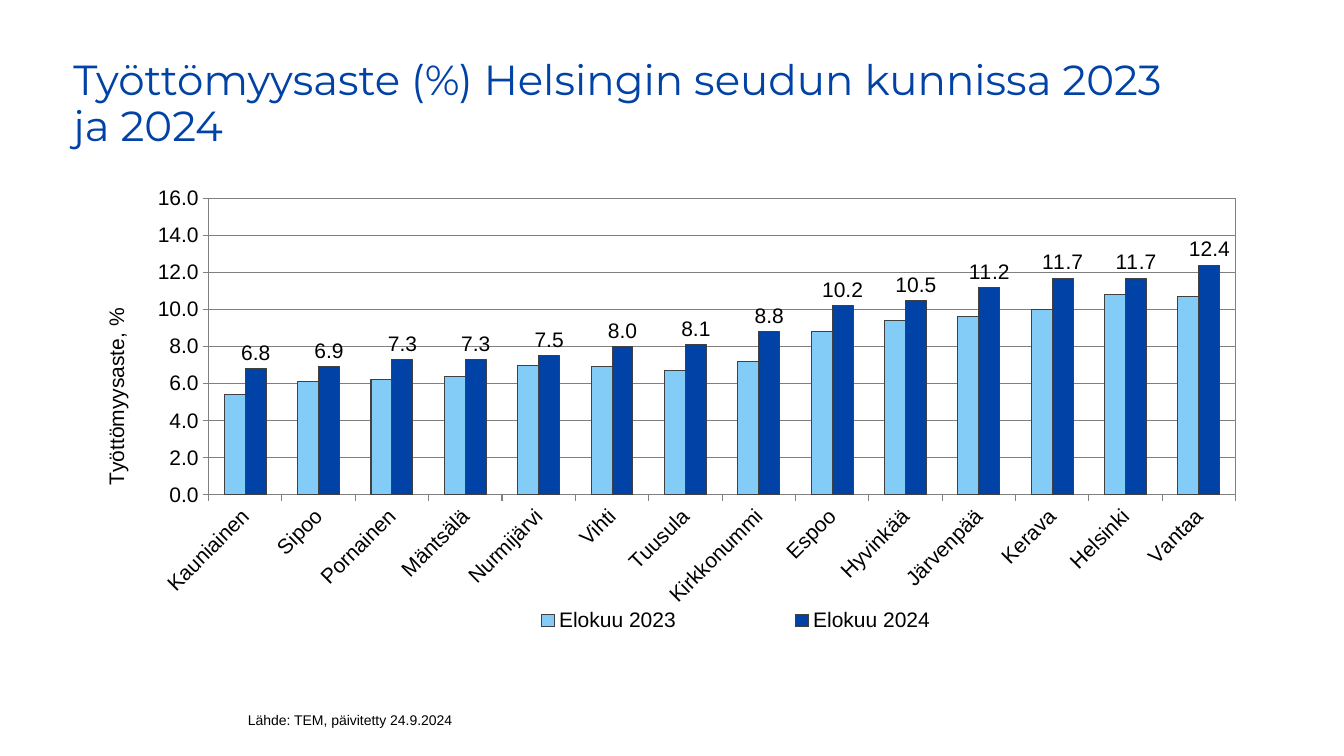
"""Build a slide comparing unemployment rates in the Helsinki region."""
from dataclasses import dataclass
from typing import Optional

from lxml.etree import SubElement
from pptx import Presentation
from pptx.chart.chart import Chart
from pptx.chart.data import CategoryChartData
from pptx.dml.color import RGBColor
from pptx.enum.chart import XL_CHART_TYPE as ChartType
from pptx.enum.chart import XL_LABEL_POSITION as LabelPosition
from pptx.enum.chart import XL_LEGEND_POSITION as LegendPosition
from pptx.enum.chart import XL_TICK_MARK as TickMark
from pptx.oxml import parse_xml
from pptx.oxml.ns import nsdecls, qn
from pptx.slide import Slide
from pptx.util import Pt

BLACK = RGBColor(0x00, 0x00, 0x00)
TITLE_BLUE = RGBColor(0x00, 0x42, 0xA6)
DARK_BLUE = RGBColor(0x00, 0x42, 0xA5)
LIGHT_BLUE = RGBColor(0x84, 0xCC, 0xF8)
OUTLINE = RGBColor(0x40, 0x40, 0x40)
GREY = RGBColor(0x80, 0x80, 0x80)
NUMBER_FORMAT = "0.0"

MUNICIPALITIES = (
    "Kauniainen", "Sipoo", "Pornainen", "Mäntsälä", "Nurmijärvi", "Vihti", "Tuusula",
    "Kirkkonummi", "Espoo", "Hyvinkää", "Järvenpää", "Kerava", "Helsinki", "Vantaa",
)


@dataclass(frozen=True)
class TextItem:
    text: str
    left: float
    top: float
    width: float
    height: float
    size: float
    font: str
    color: RGBColor
    line_spacing: Optional[float] = None


@dataclass(frozen=True)
class RateSeries:
    name: str
    color: RGBColor
    values: tuple[float, ...]
    labelled: bool = False


TEXTS = (
    TextItem("Työttömyysaste (%) Helsingin seudun kunnissa 2023 ja 2024",
             45.4, 38.9, 797, 78.5, 30, "Montserrat", TITLE_BLUE, 0.9),
    TextItem("Lähde: TEM, päivitetty 24.9.2024",
             169.9, 504.7, 331.9, 28.8, 10, "Arial", BLACK),
)
RATES = (
    RateSeries("Elokuu 2023", LIGHT_BLUE,
               (5.4, 6.1, 6.2, 6.4, 7, 6.9, 6.7, 7.2, 8.8, 9.4, 9.6, 10, 10.8, 10.7)),
    RateSeries("Elokuu 2024", DARK_BLUE,
               (6.8, 6.9, 7.3, 7.3, 7.5, 8, 8.1, 8.8, 10.2, 10.5, 11.2, 11.7, 11.7, 12.4),
               True),
)


def add_text(slide: Slide, item: TextItem) -> None:
    """Add one wrapped line of text."""
    shape = slide.shapes.add_textbox(
        Pt(item.left), Pt(item.top), Pt(item.width), Pt(item.height))
    shape.text_frame.word_wrap = True
    paragraph = shape.text_frame.paragraphs[0]
    paragraph.text = item.text
    paragraph.line_spacing = item.line_spacing
    paragraph.font.size = Pt(item.size)
    paragraph.font.name = item.font
    paragraph.font.color.rgb = item.color


def set_layout(element, left: float, top: float, width: float, height: float,
               inner: bool = False) -> None:
    """Place a chart part by fractions of the chart area."""
    for old_layout in element.findall(qn("c:layout")):
        element.remove(old_layout)
    layout = parse_xml(f"<c:layout {nsdecls('c')}><c:manualLayout/></c:layout>")
    settings = {"xMode": "edge", "yMode": "edge",
                "x": left, "y": top, "w": width, "h": height}
    if inner:
        settings = {"layoutTarget": "inner", **settings}
    for tag, value in settings.items():
        SubElement(layout[0], qn(f"c:{tag}")).set("val", str(value))
    if inner:
        element.insert(0, layout)
    else:
        element.find(qn("c:legendPos")).addnext(layout)


def style_axes(chart: Chart) -> None:
    """Set scale, grid, ticks and titles of both axes."""
    for axis in (chart.category_axis, chart.value_axis):
        axis.major_tick_mark = TickMark.OUTSIDE
        axis.minor_tick_mark = TickMark.NONE
        axis.format.line.color.rgb = GREY
        axis.format.line.width = Pt(0.75)
    chart.category_axis.tick_labels.font.size = Pt(15)
    label_text = chart.category_axis._element.find(qn("c:txPr"))
    label_text.find(qn("a:bodyPr")).set("rot", "-2700000")

    value_axis = chart.value_axis
    value_axis.minimum_scale = 0
    value_axis.maximum_scale = 16
    value_axis.major_unit = 2
    value_axis.tick_labels.number_format = NUMBER_FORMAT
    value_axis.tick_labels.number_format_is_linked = False
    value_axis.major_gridlines.format.line.color.rgb = GREY
    value_axis.major_gridlines.format.line.width = Pt(0.75)
    text_frame = value_axis.axis_title.text_frame
    text_frame.text = "Työttömyysaste, %"
    text_frame._txBody.find(qn("a:bodyPr")).set("rot", "-5400000")
    font = text_frame.paragraphs[0].font
    font.size, font.name, font.bold = Pt(15), "Arial", False
    font.color.rgb = BLACK


def style_series(chart: Chart) -> None:
    """Colour the columns and label the chosen series."""
    plot = chart.plots[0]
    plot.gap_width = 150
    plot.overlap = 0
    plot.vary_by_categories = False
    for series, rate in zip(plot.series, RATES):
        series.format.fill.solid()
        series.format.fill.fore_color.rgb = rate.color
        series.format.line.color.rgb = OUTLINE
        series.format.line.width = Pt(0.75)
        if rate.labelled:
            labels = series.data_labels
            labels.show_value = True
            labels.position = LabelPosition.OUTSIDE_END
            labels.number_format = NUMBER_FORMAT
            labels.number_format_is_linked = False


def add_rate_chart(slide: Slide) -> None:
    """Add the clustered column chart."""
    data = CategoryChartData(number_format=NUMBER_FORMAT)
    data.categories = MUNICIPALITIES
    for rate in RATES:
        data.add_series(rate.name, rate.values)
    chart = slide.shapes.add_chart(
        ChartType.COLUMN_CLUSTERED, Pt(66.2), Pt(129.6), Pt(828), Pt(328.3), data).chart
    chart.has_title = False
    chart.font.size = Pt(15)
    chart.font.name = "Arial"
    chart.font.color.rgb = BLACK
    style_axes(chart)
    style_series(chart)

    chart.has_legend = True
    chart.legend.position = LegendPosition.BOTTOM
    chart.legend.include_in_layout = False
    set_layout(chart.legend._element, 0.29, 0.92, 0.53, 0.07)
    plot_area = chart._chartSpace.chart.plotArea
    set_layout(plot_area, 0.1, 0.037, 0.886, 0.645, inner=True)
    plot_area.append(parse_xml(
        f'<c:spPr {nsdecls("c", "a")}><a:noFill/><a:ln w="{Pt(0.75)}"><a:solidFill>'
        f'<a:srgbClr val="{GREY}"/></a:solidFill></a:ln></c:spPr>'))


def main() -> None:
    """Create and save the presentation."""
    presentation = Presentation()
    presentation.slide_width, presentation.slide_height = Pt(960), Pt(540)
    slide = presentation.slides.add_slide(presentation.slide_layouts[6])
    for item in TEXTS:
        add_text(slide, item)
    add_rate_chart(slide)
    presentation.save("out.pptx")


if __name__ == "__main__":
    main()
